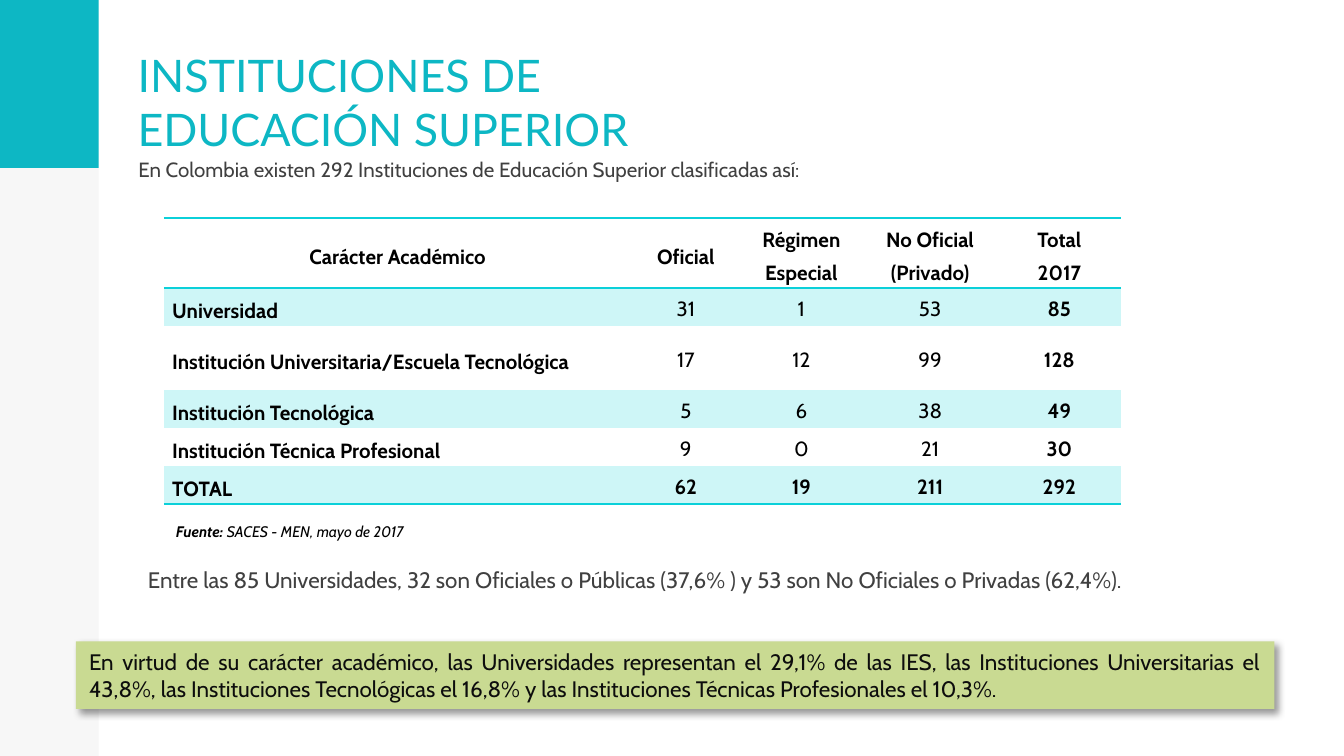
"""Build the slide on higher education institutions in Colombia."""
from lxml import etree
from pptx import Presentation
from pptx.dml.color import RGBColor
from pptx.enum.shapes import MSO_SHAPE
from pptx.enum.text import MSO_ANCHOR, MSO_AUTO_SIZE, PP_ALIGN
from pptx.oxml import parse_xml
from pptx.util import Pt

RECT = MSO_SHAPE.RECTANGLE
MIDDLE, BOTTOM = MSO_ANCHOR.MIDDLE, MSO_ANCHOR.BOTTOM
LEFT, CENTER, JUSTIFY = PP_ALIGN.LEFT, PP_ALIGN.CENTER, PP_ALIGN.JUSTIFY
TEAL = RGBColor(0x0D, 0xB7, 0xC4)
PALE_GRAY = RGBColor(0xF7, 0xF7, 0xF7)
PALE_CYAN = RGBColor(0xCE, 0xF6, 0xF7)
GREEN = RGBColor(0xC9, 0xDA, 0x92)
DARK_GRAY = RGBColor(0x40, 0x40, 0x40)
NEAR_BLACK = RGBColor(0x0D, 0x0D, 0x0D)
BLACK = RGBColor(0, 0, 0)
RULE = RGBColor(0x0B, 0xD0, 0xD9)
NS = "http://schemas.openxmlformats.org/drawingml/2006/main"
NO_GRID = "{2D5ABB26-0587-4C30-8999-92F81FD0307C}"


def style(p, size, color, align=LEFT, bold=False, font="Cabin", spacing=1.0):
    p.alignment = align
    p.line_spacing = spacing
    for r in p.runs:
        r.font.name = font
        r.font.size = Pt(size)
        r.font.bold = bold
        r.font.color.rgb = color


def add_rect(x, y, w, h, color):
    sp = s.shapes.add_shape(RECT, Pt(x), Pt(y), Pt(w), Pt(h))
    sp.shadow.inherit = False
    sp.fill.solid()
    sp.fill.fore_color.rgb = color
    sp.line.fill.background()
    return sp


prs = Presentation()
prs.slide_width, prs.slide_height = Pt(720), Pt(405)
s = prs.slides.add_slide(prs.slide_layouts[5])

add_rect(0, 0, 52.8, 405, PALE_GRAY)
add_rect(0, 0, 52.8, 90, TEAL)

title = s.shapes.title
title.left, title.top, title.width, title.height = Pt(66.5), Pt(0.5), Pt(280), Pt(90)
tf = title.text_frame
tf.text = "INSTITUCIONES DE EDUCACIÓN SUPERIOR"
tf.auto_size = MSO_AUTO_SIZE.NONE
tf.vertical_anchor = BOTTOM
tf.margin_left = tf.margin_right = tf.margin_top = tf.margin_bottom = Pt(7.2)
style(tf.paragraphs[0], 24, TEAL, font="Lato")

notes = [
    (37.4, 80.6, 445, 21, 36.7, 7.2, 11, DARK_GRAY, LEFT, 1.0,
     ["En Colombia existen 292 Instituciones de Educación Superior clasificadas así:"]),
    (87.1, 275, 270, 18.7, 7.2, 7.2, 8.2, BLACK, JUSTIFY, 1.15,
     ["Fuente: ", "SACES - MEN, mayo de 2017"]),
    (9.4, 299.5, 642, 21.6, 36.7, 16.6, 12, DARK_GRAY, CENTER, 1.0,
     ["Entre las 85 Universidades, 32 son Oficiales o Públicas (37,6% ) "
      "y 53 son No Oficiales o Privadas (62,4%)."]),
]
for x, y, w, h, left, right, size, color, align, spacing, texts in notes:
    tf = s.shapes.add_textbox(Pt(x), Pt(y), Pt(w), Pt(h)).text_frame
    tf.word_wrap = True
    tf.margin_left, tf.margin_right = Pt(left), Pt(right)
    p = tf.paragraphs[0]
    for text in texts:
        p.add_run().text = text
    style(p, size, color, align, spacing=spacing)
    if len(texts) > 1:
        p.runs[0].font.bold = True
        for r in p.runs:
            r.font.italic = True

callout = add_rect(40.6, 343.6, 642.2, 36.2, GREEN)
tf = callout.text_frame
tf.vertical_anchor = MIDDLE
tf.text = ("En virtud de su carácter académico, las Universidades representan el 29,1% "
           "de las IES, las Instituciones Universitarias el 43,8%, las Instituciones "
           "Tecnológicas el 16,8% y las Instituciones Técnicas Profesionales el 10,3%.")
style(tf.paragraphs[0], 12, NEAR_BLACK, JUSTIFY)
effects = callout._element.spPr.find(f"{{{NS}}}effectLst")
effects.append(parse_xml(
    f'<a:outerShdw xmlns:a="{NS}" blurRad="{Pt(4)}" dist="{Pt(3)}" dir="2700000" '
    'algn="tl" rotWithShape="0"><a:srgbClr val="000000"><a:alpha val="40000"/>'
    '</a:srgbClr></a:outerShdw>'))

rows = [
    ["Carácter Académico", "Oficial", "Régimen Especial", "No Oficial\n(Privado)", "Total\n2017"],
    ["Universidad", "31", "1", "53", "85"],
    ["Institución Universitaria/Escuela Tecnológica", "17", "12", "99", "128"],
    ["Institución Tecnológica", "5", "6", "38", "49"],
    ["Institución Técnica Profesional", "9", "0", "21", "30"],
    ["TOTAL", "62", "19", "211", "292"],
]
widths = [250.5, 58.3, 65.5, 72.5, 66]
heights = [37.6, 20.3, 34.5, 20.3, 20.3, 20.3]
last_row, last_col = len(rows) - 1, len(widths) - 1
table = s.shapes.add_table(len(rows), len(widths), Pt(87.8), Pt(116.7),
                           Pt(sum(widths)), Pt(sum(heights))).table
table.horz_banding = False
table._tbl.tblPr[0].text = NO_GRID
for column, width in zip(table.columns, widths):
    column.width = Pt(width)
for i, row in enumerate(rows):
    table.rows[i].height = Pt(heights[i])
    for j, text in enumerate(row):
        cell = table.cell(i, j)
        cell.text_frame.text = text
        cell.vertical_anchor = MIDDLE
        cell.margin_left = cell.margin_right = Pt(4.5)
        cell.margin_top = cell.margin_bottom = 0
        bold = i in (0, last_row) or j in (0, last_col)
        for p in cell.text_frame.paragraphs:
            style(p, 11, BLACK, LEFT if i and j == 0 else CENTER, bold,
                  spacing=1.3 if i == 0 or j == 0 else 1.15)
        edges = {0: ["lnT", "lnB"], last_row: ["lnB"]}.get(i, [])
        for edge in edges:
            ln = etree.SubElement(cell._tc.tcPr, f"{{{NS}}}{edge}", w=str(Pt(1)))
            fill = etree.SubElement(ln, f"{{{NS}}}solidFill")
            etree.SubElement(fill, f"{{{NS}}}srgbClr", val=str(RULE))
        if i % 2:
            cell.fill.solid()
            cell.fill.fore_color.rgb = PALE_CYAN
        else:
            cell.fill.background()

prs.save("out.pptx")
